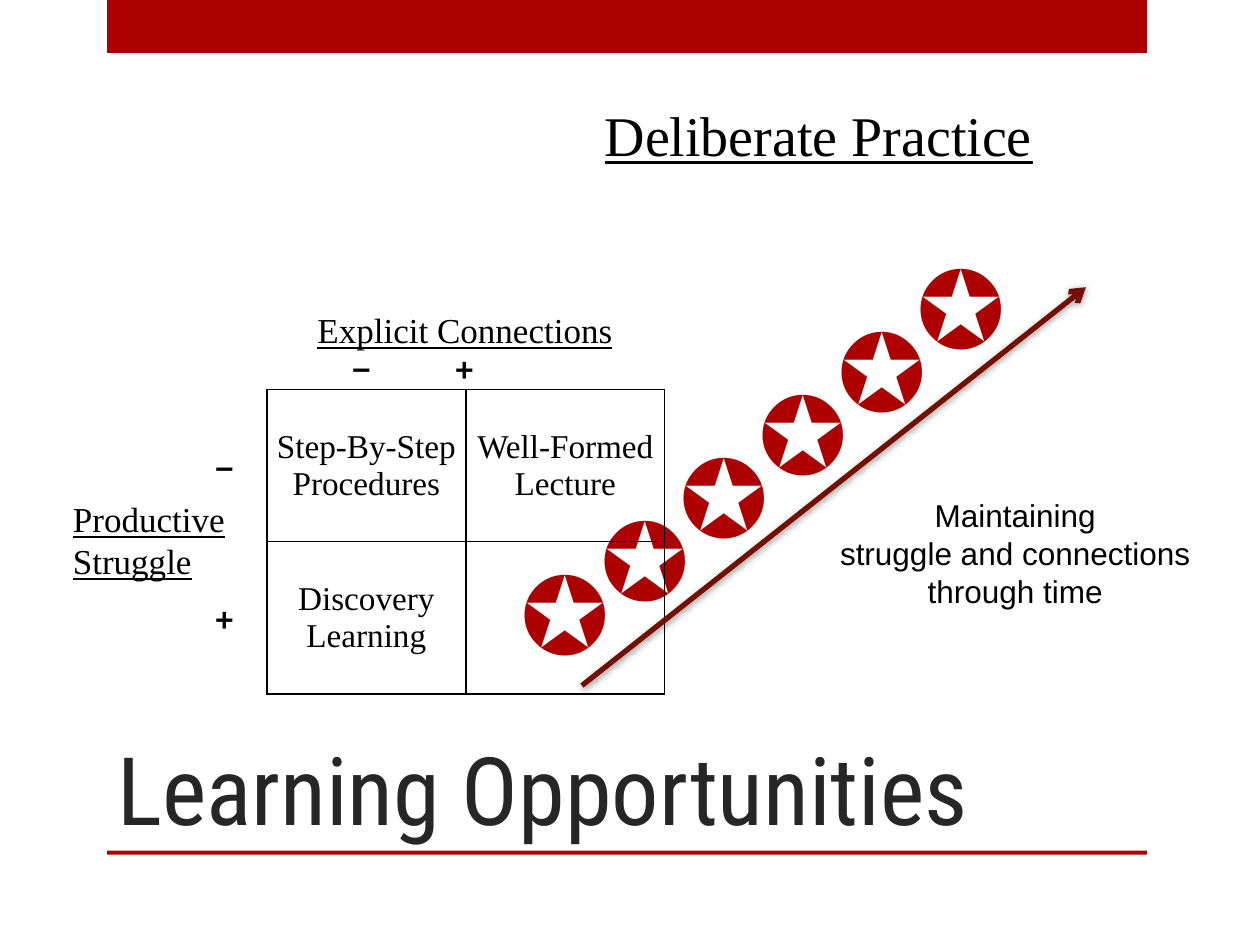
from lxml import etree
from pptx import Presentation
from pptx.dml.color import RGBColor
from pptx.enum.shapes import MSO_CONNECTOR, MSO_SHAPE
from pptx.enum.text import MSO_ANCHOR, MSO_AUTO_SIZE, PP_ALIGN
from pptx.oxml import parse_xml
from pptx.oxml.ns import nsdecls
from pptx.util import Cm, Pt

LEFT, CENTER = PP_ALIGN.LEFT, PP_ALIGN.CENTER
BOTTOM, MIDDLE = MSO_ANCHOR.BOTTOM, MSO_ANCHOR.MIDDLE
NO_AUTOFIT = MSO_AUTO_SIZE.NONE
RECTANGLE, STRAIGHT = MSO_SHAPE.RECTANGLE, MSO_CONNECTOR.STRAIGHT

COLORS = {"red": "AD0101", "arrow": "730E00", "title": "262626", "ink": "000000"}

SERIF, SIGN_FACE = "Times New Roman", "Noto Sans CJK JP"
TITLE = {"name": "Roboto Condensed", "size": Pt(54)}
HEADING = {"name": SERIF, "size": Pt(32), "underline": True}
AXIS = {"name": SERIF, "size": Pt(20), "underline": True}
CELL = {"name": SERIF, "size": Pt(19)}
SIGN = {"name": SIGN_FACE, "size": Pt(18), "bold": True}
NOTE = {"name": "Arial", "size": Pt(18)}
STAR = {"name": "Arial", "size": Pt(61)}

STAR_SIGN = "✪"
PRACTICES = [
    ["Step-By-Step Procedures", "Well-Formed Lecture"],
    ["Discovery Learning", STAR_SIGN],
]


def rgb(color):
    return RGBColor.from_string(COLORS[color])


def write(frame, lines, font_format, color="ink", align=LEFT):
    """Fill a text frame, one paragraph a line, and format it."""
    frame.text = "\n".join(lines)
    for paragraph in frame.paragraphs:
        paragraph.alignment = align
        for run in paragraph.runs:
            for attribute, value in font_format.items():
                setattr(run.font, attribute, value)
            run.font.color.rgb = rgb(color)


def add_label(slide, box, lines, font_format, color="ink", align=LEFT, wrap=False):
    frame = slide.shapes.add_textbox(*map(Cm, box)).text_frame
    frame.word_wrap = wrap
    write(frame, lines, font_format, color, align)
    return frame


def add_bar(slide, top, height):
    bar = slide.shapes.add_shape(RECTANGLE, Cm(2.16), Cm(top), Cm(20.96), Cm(height))
    bar.shadow.inherit = False
    bar.fill.solid()
    bar.fill.fore_color.rgb = rgb("red")
    bar.line.fill.background()


def set_title(slide, text):
    title = slide.shapes.title
    place = {"left": 2.11, "top": 12.7, "width": 18.85, "height": 4.45}
    for attribute, value in place.items():
        setattr(title, attribute, Cm(value))
    frame = title.text_frame
    frame.auto_size = NO_AUTOFIT
    frame.vertical_anchor = BOTTOM
    write(frame, [text], TITLE, "title")


def add_borders(cell):
    properties = cell._tc.get_or_add_tcPr()
    for side in ("lnL", "lnR", "lnT", "lnB"):
        properties.append(parse_xml(
            f'<a:{side} {nsdecls("a")} w="{Pt(1)}"><a:solidFill>'
            f'<a:srgbClr val="{COLORS["ink"]}"/></a:solidFill></a:{side}>'))


def add_matrix(slide):
    column_width, row_height = Cm(4.01), Cm(3.07)
    table = slide.shapes.add_table(
        2, 2, Cm(5.38), Cm(7.85), 2 * column_width, 2 * row_height).table
    table.first_row = table.horz_banding = False
    cell_format = {
        "vertical_anchor": MIDDLE,
        "margin_left": Cm(0.18), "margin_right": Cm(0.18),
        "margin_top": Cm(0.08), "margin_bottom": Cm(0.08),
    }
    for index, practices in enumerate(PRACTICES):
        table.columns[index].width = column_width
        table.rows[index].height = row_height
        for column, practice in enumerate(practices):
            cell = table.cell(index, column)
            for attribute, value in cell_format.items():
                setattr(cell, attribute, value)
            add_borders(cell)
            cell.fill.background()
            starred = practice == STAR_SIGN
            write(cell.text_frame, [practice], STAR if starred else CELL,
                  "red" if starred else "ink", CENTER)


def add_star(slide, step):
    """Each star lies one equal step further up and to the right."""
    box = (11.86 + 1.59 * step, 9.83 - 1.27 * step, 2.24, 2.87)
    add_label(slide, box, [STAR_SIGN], STAR, "red", CENTER)


def add_signs(slide):
    # Column signs, set apart by a tab stop
    across = add_label(slide, (6.86, 6.96, 9.32, 1.02), ["−\t+"], SIGN, wrap=True)
    tabs = etree.SubElement(across.paragraphs[0]._p.get_or_add_pPr(),
                            "{http://schemas.openxmlformats.org/drawingml/2006/main}tabLst")
    etree.SubElement(tabs, tabs.tag.replace("tabLst", "tab"),
                     pos=str(Cm(2.08)), algn="l")
    # Row signs, set apart by paragraph spacing
    down = add_label(slide, (4.09, 8.94, 2.11, 4.11), ["−", "+"], SIGN, wrap=True)
    down.paragraphs[1].space_before = Pt(65)


def add_time_arrow(slide):
    arrow = slide.shapes.add_connector(
        STRAIGHT, Cm(11.73), Cm(13.82), Cm(21.89), Cm(5.79))
    arrow.line.color.rgb = rgb("arrow")
    arrow.line.width = Pt(3)
    arrow.line._get_or_add_ln().append(
        parse_xml(f'<a:tailEnd {nsdecls("a")} type="arrow"/>'))
    arrow._element.spPr.append(parse_xml(
        f'<a:effectLst {nsdecls("a")}><a:outerShdw blurRad="{Pt(4)}" dist="{Pt(1)}" '
        f'dir="{88 * 60000}" rotWithShape="0"><a:srgbClr val="{COLORS["ink"]}">'
        '<a:alpha val="40000"/></a:srgbClr></a:outerShdw></a:effectLst>'))


def main():
    presentation = Presentation()
    presentation.slide_width, presentation.slide_height = Cm(25.4), Cm(19.05)
    slide = presentation.slides.add_slide(presentation.slide_layouts[5])

    # Frame and title
    add_bar(slide, 0, 1.07)
    add_bar(slide, 17.15, 0.08)
    set_title(slide, "Learning Opportunities")

    # Matrix of practices; the first star lies behind it
    add_star(slide, 0)
    add_matrix(slide)
    add_label(slide, (6.15, 6.1, 6.5, 1.12), ["Explicit Connections"], AXIS)
    add_label(slide, (1.22, 9.91, 3.61, 1.96), ["Productive", "Struggle"], AXIS)
    add_signs(slide)

    # Deliberate practice through time
    for step in range(1, 5):
        add_star(slide, step)
    add_time_arrow(slide)
    add_label(slide, (11.94, 1.9, 9.22, 1.63), ["Deliberate Practice"], HEADING)
    add_label(slide, (16.64, 9.88, 7.65, 2.57),
              ["Maintaining", "struggle and connections", "through time"],
              NOTE, align=CENTER)

    presentation.save("out.pptx")


if __name__ == "__main__":
    main()
